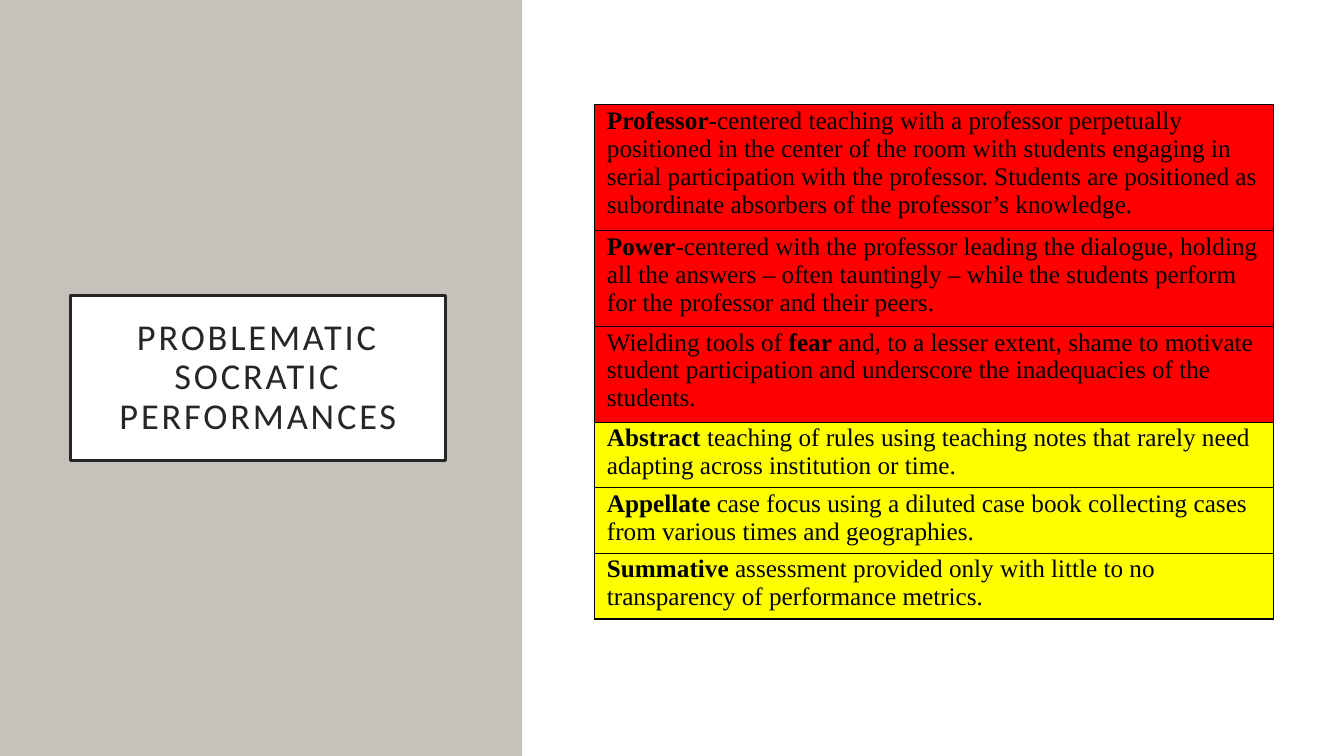
from pptx import Presentation
from pptx.dml.color import RGBColor
from pptx.enum.shapes import MSO_SHAPE as Shape
from pptx.enum.text import MSO_ANCHOR as Anchor, PP_ALIGN as Align
from pptx.oxml import parse_xml
from pptx.oxml.ns import nsdecls
from pptx.util import Inches, Pt

WIDTH, HEIGHT = 13.33, 7.5
TITLE = "PROBLEMATIC SOCRATIC PERFORMANCES"
RED, YELLOW = "FF0000", "FFFF00"
INK, BLACK, WHITE, STONE = "262626", "000000", "FFFFFF", "C6C1BA"

# Each row: fill, height, text before the bold word, bold word, text after
ROWS = [
    (RED, 1.25, "", "Professor",
     "-centered teaching with a professor perpetually positioned in the center "
     "of the room with students engaging in serial participation with the "
     "professor. Students are positioned as subordinate absorbers of the "
     "professor’s knowledge."),
    (RED, 0.95, "", "Power",
     "-centered with the professor leading the dialogue, holding all the answers "
     "– often tauntingly – while the students perform for the professor and "
     "their peers."),
    (RED, 0.95, "Wielding tools of ", "fear",
     " and, to a lesser extent, shame to motivate student participation and "
     "underscore the inadequacies of the students."),
    (YELLOW, 0.65, "", "Abstract",
     " teaching of rules using teaching notes that rarely need adapting across "
     "institution or time."),
    (YELLOW, 0.65, "", "Appellate",
     " case focus using a diluted case book collecting cases from various times "
     "and geographies."),
    (YELLOW, 0.65, "", "Summative",
     " assessment provided only with little to no transparency of performance "
     "metrics."),
]

# Places: left, top, width, height
LEFT_PANEL = (0, 0, 5.18, HEIGHT)
RIGHT_PANEL = (5.2, 0, WIDTH - 5.2, HEIGHT)
TITLE_BOX = (0.7, 2.93, 3.72, 1.64)
TABLE_BOX = (5.9, 1.04, 6.73, sum(row[1] for row in ROWS))


def color(value):
    return RGBColor.from_string(value)


def paint(target, value):
    target.fill.solid()
    target.fill.fore_color.rgb = color(value)


def set_all(target, values):
    for name, value in values.items():
        setattr(target, name, value)


def inches(place):
    return [Inches(length) for length in place]


def add_panel(page, place, fill):
    panel = page.shapes.add_shape(Shape.RECTANGLE, *inches(place))
    panel.shadow.inherit = False
    paint(panel, fill)
    panel.line.fill.background()
    return panel


def add_span(para, text, size, font, ink, bold=False):
    span = para.add_run()
    span.text = text
    set_all(span.font, {"size": Pt(size), "name": font, "bold": bold})
    span.font.color.rgb = color(ink)
    return span


def add_borders(cell):
    properties = cell._tc.get_or_add_tcPr()
    for index, side in enumerate(("lnL", "lnR", "lnT", "lnB")):
        properties.insert(index, parse_xml(
            f'<a:{side} {nsdecls("a")} w="{Pt(1)}"><a:solidFill>'
            f'<a:srgbClr val="{BLACK}"/></a:solidFill></a:{side}>'))


def add_title(page):
    box = page.shapes.title
    set_all(box, dict(zip(("left", "top", "width", "height"), inches(TITLE_BOX))))
    paint(box, WHITE)
    box.line.color.rgb = color(INK)
    box.line.width = Pt(2.5)
    frame = box.text_frame
    margins = ("margin_left", "margin_right", "margin_top", "margin_bottom")
    set_all(frame, {"word_wrap": True, "vertical_anchor": Anchor.MIDDLE,
                    **dict.fromkeys(margins, Inches(0.2))})
    para = frame.paragraphs[0]
    set_all(para, {"alignment": Align.CENTER, "line_spacing": 0.9})
    span = add_span(para, TITLE, 26, "Calibri", INK)
    span.font._element.set("spc", "200")
    return box


def add_practices(page):
    table = page.shapes.add_table(len(ROWS), 1, *inches(TABLE_BOX)).table
    set_all(table, {"first_row": False, "horz_banding": False})
    for index, (fill, height, before, key, after) in enumerate(ROWS):
        table.rows[index].height = Inches(height)
        cell = table.cell(index, 0)
        set_all(cell, {"margin_left": Inches(0.12), "margin_right": Inches(0.12),
                       "margin_top": Inches(0.02), "margin_bottom": 0})
        paint(cell, fill)
        add_borders(cell)
        para = cell.text_frame.paragraphs[0]
        for text, bold in ((before, False), (key, True), (after, False)):
            if text:
                add_span(para, text, 18, "Times New Roman", BLACK, bold)


deck = Presentation()
set_all(deck, {"slide_width": Inches(WIDTH), "slide_height": Inches(HEIGHT)})
page = deck.slides.add_slide(deck.slide_layouts[5])

# Left panel goes behind the title
panel = add_panel(page, LEFT_PANEL, STONE)
title = add_title(page)
title._element.addprevious(panel._element)

# Right panel carries the table
add_panel(page, RIGHT_PANEL, WHITE)
add_practices(page)

deck.save("out.pptx")
